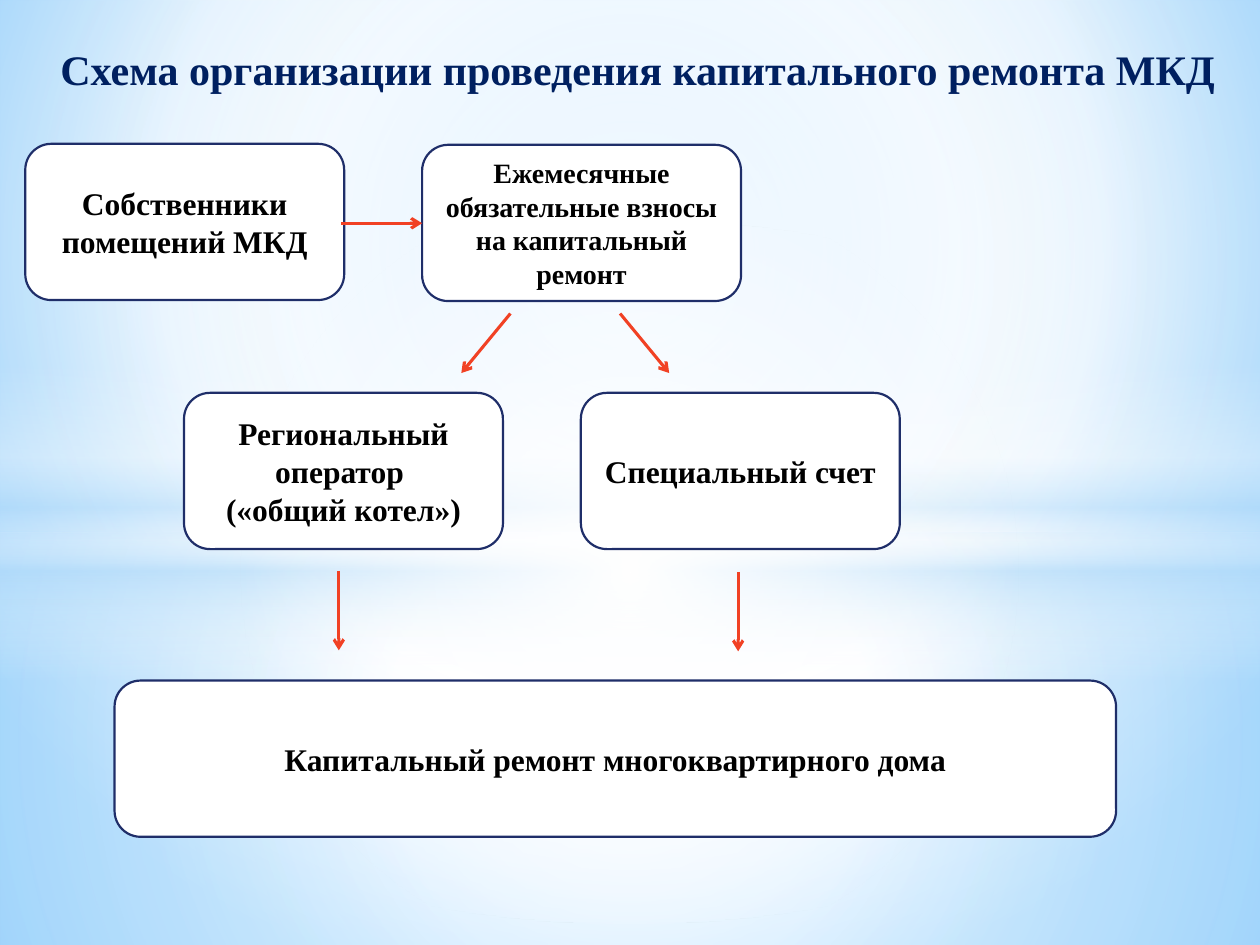
"""Build a slide with the scheme for organising capital repairs of apartment buildings."""
import pptx
import pptx.dml.color
import pptx.enum.shapes
import pptx.enum.text
import pptx.oxml
import pptx.oxml.ns
import pptx.util
from lxml import etree

Cm, Pt = pptx.util.Cm, pptx.util.Pt
RGBColor = pptx.dml.color.RGBColor
SHAPE = pptx.enum.shapes.MSO_SHAPE
ANCHOR = pptx.enum.text.MSO_ANCHOR
CENTER = pptx.enum.text.PP_ALIGN.CENTER
qn = pptx.oxml.ns.qn

FONT = "Times New Roman"
WHITE = RGBColor(0xFF, 0xFF, 0xFF)
BLACK = RGBColor(0x00, 0x00, 0x00)
TITLE_BLUE = RGBColor(0x00, 0x20, 0x60)
BORDER_BLUE = RGBColor(0x1F, 0x2E, 0x69)
ARROW_RED = RGBColor(0xF1, 0x41, 0x24)
PALE_BLUE = RGBColor(0xB4, 0xDC, 0xFA)
SKY_BLUE = RGBColor(0x9E, 0xD5, 0xFF)
DEEP_BLUE = RGBColor(0x5B, 0xB9, 0xFF)


def set_gradient(parent, stops, focus):
    """Replace the solid fill of parent; focus None gives a vertical gradient."""
    gs = "".join(
        f'<a:gs pos="{pos * 1000}"><a:srgbClr val="{color}">'
        f'<a:alpha val="{alpha * 1000}"/></a:srgbClr></a:gs>'
        for pos, color, alpha in stops)
    if focus is None:
        direction = '<a:lin ang="5400000" scaled="0"/>'
    else:
        l, t, r, b = (v * 1000 for v in focus)
        direction = (f'<a:path path="circle"><a:fillToRect l="{l}" t="{t}" '
                     f'r="{r}" b="{b}"/></a:path>')
    grad = pptx.oxml.parse_xml(
        f'<a:gradFill {pptx.oxml.ns.nsdecls("a")} rotWithShape="1">'
        f'<a:gsLst>{gs}</a:gsLst>{direction}</a:gradFill>')
    parent.replace(parent.find(qn("a:solidFill")), grad)


def add_text(p, text, size, color):
    """Add one centred bold run to a paragraph."""
    p.alignment = CENTER
    r = p.add_run()
    r.text = text
    r.font.name = FONT
    r.font.size = Pt(size)
    r.font.bold = True
    r.font.color.rgb = color


prs = pptx.Presentation()
prs.slide_width, prs.slide_height = Cm(25.4), Cm(19.05)
s = prs.slides.add_slide(prs.slide_layouts[5])

s.background.fill.solid()
set_gradient(s.element.find(".//" + qn("p:bgPr")),
             [(0, SKY_BLUE, 100), (60, WHITE, 100), (100, DEEP_BLUE, 100)],
             (20, 10, 20, 60))

MIDDLE = (50, 50, 50, 50)
layers = [
    (SHAPE.RECTANGLE, 10.74, 8.31, MIDDLE,
     [(0, WHITE, 91), (37, WHITE, 76), (100, PALE_BLUE, 79)]),
    (SHAPE.RECTANGLE, 0, 10.74, MIDDLE,
     [(0, WHITE, 89), (48, WHITE, 62), (100, PALE_BLUE, 79)]),
    (SHAPE.RECTANGLE, 7.37, 6.35, None,
     [(0, WHITE, 0), (29, WHITE, 30), (45, PALE_BLUE, 40),
      (55, WHITE, 26), (65, PALE_BLUE, 60), (100, WHITE, 0)]),
    (SHAPE.OVAL, 4.45, 14.17, MIDDLE, [(0, WHITE, 100), (54, WHITE, 0)]),
]
for kind, top, height, focus, stops in layers:
    sp = s.shapes.add_shape(kind, 0, Cm(top), prs.slide_width, Cm(height))
    sp.shadow.inherit = False
    sp.line.fill.background()
    sp.fill.solid()
    set_gradient(sp.element.spPr, stops, focus)

title = s.shapes.title
title.element.getparent().append(title.element)
title.left, title.top, title.width, title.height = Cm(0.3), Cm(0.74), Cm(24.61), Cm(2.01)
tf = title.text_frame
tf.word_wrap = True
tf.auto_size = pptx.enum.text.MSO_AUTO_SIZE.NONE
tf.vertical_anchor = ANCHOR.TOP
p = tf.paragraphs[0]
add_text(p, "Схема организации проведения капитального ремонта МКД", 24, TITLE_BLUE)
p.line_spacing = 1.0
p.space_before = Pt(0)
pPr = p._p.get_or_add_pPr()
pPr.set("marL", str(Cm(0.5)))
pPr.set("indent", "0")

BOX_W, BOX_H = 6.43, 3.15
boxes = [
    (0.51, 2.9, BOX_W, 18, ["Собственники помещений МКД"]),
    (8.51, 2.92, BOX_W, 16, ["Ежемесячные обязательные взносы на капитальный ремонт"]),
    (3.71, 7.92, BOX_W, 18, ["Региональный оператор ", "(«общий котел»)"]),
    (11.71, 7.92, BOX_W, 18, ["Специальный счет"]),
    (2.31, 13.72, 20.19, 18, ["Капитальный ремонт многоквартирного дома"]),
]
for left, top, width, size, lines in boxes:
    sp = s.shapes.add_shape(SHAPE.ROUNDED_RECTANGLE, Cm(left), Cm(top), Cm(width), Cm(BOX_H))
    sp.shadow.inherit = False
    sp.fill.solid()
    sp.fill.fore_color.rgb = WHITE
    sp.line.color.rgb = BORDER_BLUE
    sp.line.width = Pt(1.25)
    tf = sp.text_frame
    tf.word_wrap = True
    tf.vertical_anchor = ANCHOR.MIDDLE
    for i, text in enumerate(lines):
        p = tf.add_paragraph() if i else tf.paragraphs[0]
        add_text(p, text, size, BLACK)

arrows = [
    (6.88, 4.5, 8.51, 4.5),
    (10.29, 6.32, 9.3, 7.52),
    (12.5, 6.32, 13.49, 7.52),
    (6.83, 11.51, 6.83, 13.11),
    (14.88, 11.53, 14.88, 13.13),
]
for ends in arrows:
    arrow = s.shapes.add_connector(
        pptx.enum.shapes.MSO_CONNECTOR.STRAIGHT, *(Cm(v) for v in ends))
    arrow.line.color.rgb = ARROW_RED
    arrow.line.width = Pt(1.75)
    spPr = arrow.element.spPr
    etree.SubElement(spPr.find(qn("a:ln")), qn("a:tailEnd"), type="arrow")
    etree.SubElement(spPr, qn("a:effectLst"))

prs.save("out.pptx")
